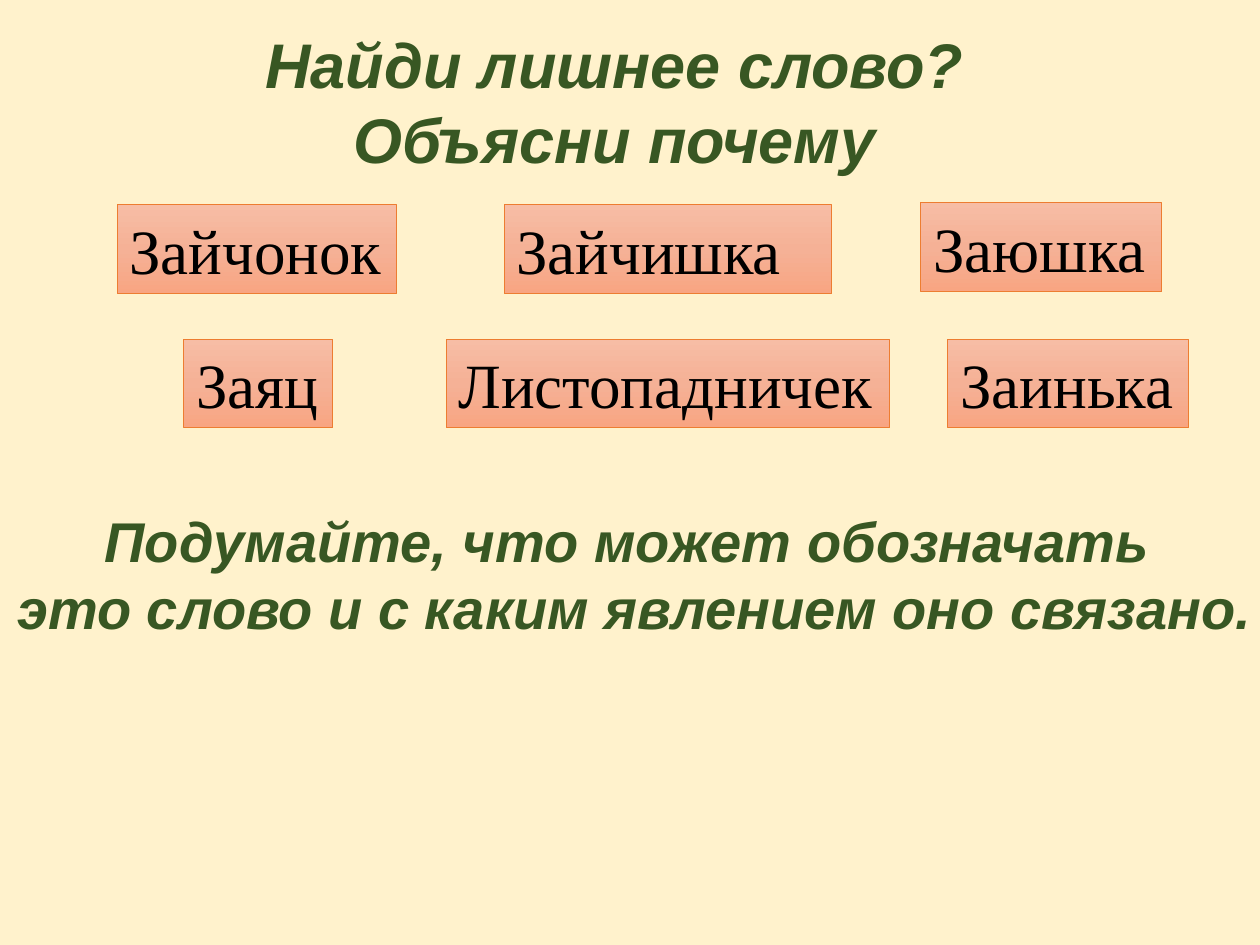
"""Build the slide that asks which hare word is the odd one out."""
import copy

import pptx
import pptx.dml.color
import pptx.enum.shapes
import pptx.enum.text
import pptx.oxml.ns
import pptx.util

PX = 914400 // 126
CREAM, GREEN, ORANGE = "FFF2CC", "385723", "ED7D31"
GRADIENT = [(0, "F7BDA5"), (0.5, "F5B196"), (1, "F8A582")]


def color(value):
    return pptx.dml.color.RGBColor.from_string(value)


def format_text(shape, lines, font_name, size, text_color, heading, wrap=False):
    frame = shape.text_frame
    frame.text = "\n".join(lines)
    frame.word_wrap = wrap
    frame.auto_size = pptx.enum.text.MSO_AUTO_SIZE.SHAPE_TO_FIT_TEXT
    frame.vertical_anchor = pptx.enum.text.MSO_ANCHOR.TOP
    alignment = pptx.enum.text.PP_ALIGN
    for paragraph in frame.paragraphs:
        paragraph.alignment = alignment.CENTER if heading else alignment.LEFT
        paragraph.font.name = font_name
        paragraph.font.size = pptx.util.Pt(size)
        paragraph.font.bold = paragraph.font.italic = heading
        paragraph.font.color.rgb = color(text_color)


presentation = pptx.Presentation()
presentation.slide_width = pptx.util.Inches(10)
presentation.slide_height = pptx.util.Inches(7.5)
slide = presentation.slides.add_slide(presentation.slide_layouts[5])
slide.background.fill.solid()
slide.background.fill.fore_color.rgb = color(CREAM)
rectangle = pptx.enum.shapes.MSO_SHAPE.RECTANGLE

title = slide.shapes.title
title.left, title.top, title.width, title.height = [n * PX for n in (249, 19, 731, 165)]
format_text(title, ["Найди лишнее слово?", "Объясни почему"], "Arial", 36, GREEN, True)

top_row = slide.shapes.add_group_shape().shapes
bottom_row = slide.shapes.add_group_shape().shapes
words = [
    (top_row, "Зайчонок", 117, 205, 280, False),
    (top_row, "Зайчишка", 504, 205, 328, True),
    (top_row, "Заюшка", 921, 203, 241, False),
    (bottom_row, "Заяц", 184, 339, 149, False),
    (bottom_row, "Заинька", 948, 339, 241, False),
    (slide.shapes, "Листопадничек", 446, 339, 444, False),
]
for shapes, word, left, top, width, wrap in words:
    card = shapes.add_shape(rectangle, left * PX, top * PX, width * PX, 89 * PX)
    card.shadow.inherit = False
    card.fill.gradient()
    card.fill.gradient_angle = 270
    stop_list = card._element.spPr.find(".//" + pptx.oxml.ns.qn("a:gsLst"))
    stop_list.insert(1, copy.deepcopy(stop_list[0]))
    for stop, (position, stop_color) in zip(card.fill.gradient_stops, GRADIENT):
        stop.position = position
        stop.color.rgb = color(stop_color)
    card.line.color.rgb = color(ORANGE)
    card.line.width = pptx.util.Pt(0.5)
    format_text(card, [word], "Times New Roman", 36, "000000", False, wrap)

question = slide.shapes.add_shape(rectangle, 0, 500 * PX, 1270 * PX, 149 * PX)
question.shadow.inherit = False
format_text(
    question,
    ["Подумайте, что может обозначать ", "это слово и с каким явлением оно связано."],
    "Arial", 32, GREEN, True,
)

for shape, line_width in ((title, 0.75), (question, 0.5)):
    shape.fill.solid()
    shape.fill.fore_color.rgb = color(CREAM)
    shape.line.color.rgb = color(CREAM)
    shape.line.width = pptx.util.Pt(line_width)

presentation.save("out.pptx")
